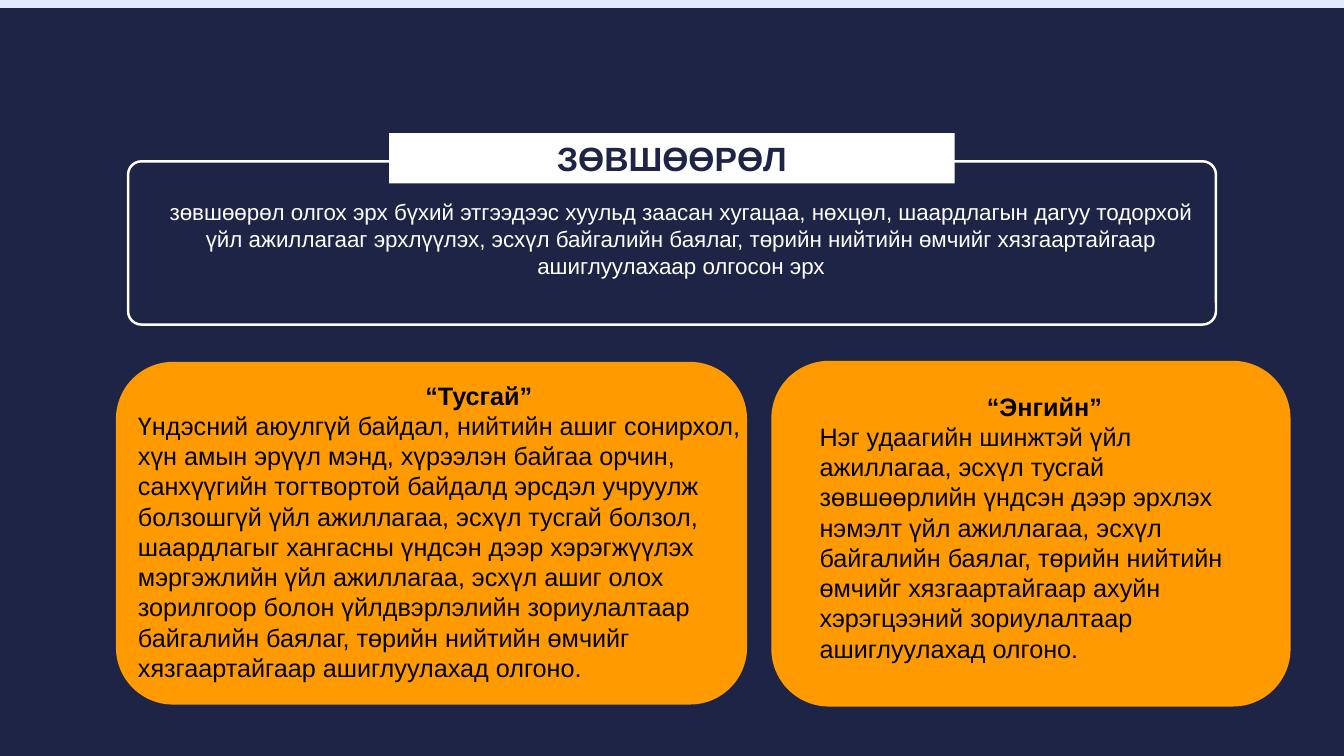
from pptx import Presentation
from pptx.dml.color import RGBColor
from pptx.enum.shapes import MSO_SHAPE as Shape
from pptx.enum.text import PP_ALIGN as Align
from pptx.util import Inches, Pt

NAVY, WHITE, ORANGE, BLACK = "1E2446", "FFFFFF", "FF9A00", "000000"
PALE_BLUE = "E3EAFB"
WIDTH, HEIGHT = 13.33, 7.5

DEFINITION = (
    "зөвшөөрөл олгох эрх бүхий этгээдээс хуульд заасан хугацаа, нөхцөл, "
    "шаардлагын дагуу тодорхой үйл ажиллагааг эрхлүүлэх, эсхүл байгалийн баялаг, "
    "төрийн нийтийн өмчийг хязгаартайгаар ашиглуулахаар олгосон эрх"
)
SPECIAL = (
    "Үндэсний аюулгүй байдал, нийтийн ашиг сонирхол, хүн амын эрүүл мэнд, "
    "хүрээлэн байгаа орчин, санхүүгийн тогтвортой байдалд эрсдэл учруулж "
    "болзошгүй үйл ажиллагаа, эсхүл тусгай болзол, шаардлагыг хангасны үндсэн "
    "дээр хэрэгжүүлэх мэргэжлийн үйл ажиллагаа, эсхүл ашиг олох зорилгоор болон "
    "үйлдвэрлэлийн зориулалтаар байгалийн баялаг, төрийн нийтийн өмчийг "
    "хязгаартайгаар ашиглуулахад олгоно."
)
ORDINARY = (
    "Нэг удаагийн шинжтэй үйл ажиллагаа, эсхүл тусгай зөвшөөрлийн үндсэн дээр "
    "эрхлэх нэмэлт үйл ажиллагаа, эсхүл байгалийн баялаг, төрийн нийтийн өмчийг "
    "хязгаартайгаар ахуйн хэрэгцээний зориулалтаар ашиглуулахад олгоно."
)


def color(value):
    return RGBColor.from_string(value)


def add_panel(page, kind, box, fill=None, line=None):
    panel = page.shapes.add_shape(kind, *map(Inches, box))
    panel.shadow.inherit = False
    if fill:
        panel.fill.solid()
        panel.fill.fore_color.rgb = color(fill)
    else:
        panel.fill.background()
    if line:
        panel.line.color.rgb = color(line)
        panel.line.width = Pt(1.75)
    else:
        panel.line.fill.background()
    return panel


def add_text_frame(page, box):
    frame = page.shapes.add_textbox(*map(Inches, box)).text_frame
    frame.word_wrap = True
    return frame


def write(para, text, size, ink, bold=False, align=Align.LEFT):
    para.alignment = align
    span = para.add_run()
    span.text = text
    span.font.name = "Arial"
    span.font.size = Pt(size)
    span.font.bold = bold
    span.font.color.rgb = color(ink)


def add_definition(page, box):
    """Outlined box with a title label across its top edge."""
    left, top, width, height = box
    frame = add_panel(page, Shape.ROUNDED_RECTANGLE, box, line=WHITE)
    frame.adjustments[0] = 0.082

    label_width, label_height = 5.61, 0.5
    label = (left + (width - label_width) / 2, top - 0.28, label_width, label_height)
    add_panel(page, Shape.RECTANGLE, label, fill=WHITE)
    title = add_text_frame(page, label)
    write(title.paragraphs[0], "ЗӨВШӨӨРӨЛ", 24, NAVY, True, Align.CENTER)

    body = add_text_frame(page, (left + 0.18, top + 0.32, width - 0.18, 0.91))
    write(body.paragraphs[0], DEFINITION, 16, WHITE, align=Align.CENTER)


def add_permit_card(page, box, text_box, heading, indent, body):
    """Orange card; text_box is offset from the card's corner."""
    left, top = box[:2]
    dx, dy, width, height = text_box
    add_panel(page, Shape.ROUNDED_RECTANGLE, box, fill=ORANGE)
    frame = add_text_frame(page, (left + dx, top + dy, width, height))
    head = frame.paragraphs[0]
    write(head, heading, 18, BLACK, bold=True)
    properties = head._p.get_or_add_pPr()
    properties.set("marL", str(Inches(indent)))
    properties.set("indent", "0")
    write(frame.add_paragraph(), body, 18, BLACK)


def main():
    deck = Presentation()
    deck.slide_width, deck.slide_height = Inches(WIDTH), Inches(HEIGHT)
    page = deck.slides.add_slide(deck.slide_layouts[6])
    page.background.fill.solid()
    page.background.fill.fore_color.rgb = color(PALE_BLUE)
    add_panel(page, Shape.RECTANGLE, (0, 0.08, WIDTH, HEIGHT - 0.08), fill=NAVY)

    add_definition(page, (1.27, 1.6, 10.79, 1.62))
    add_permit_card(page, (1.15, 3.59, 6.26, 3.4), (0.12, 0.13, 6.6, 3.13),
                    "“Тусгай”", 2.85, SPECIAL)
    add_permit_card(page, (7.65, 3.58, 5.15, 3.43), (0.38, 0.25, 4.39, 3.13),
                    "“Энгийн”", 1.66, ORDINARY)
    deck.save("out.pptx")


if __name__ == "__main__":
    main()
